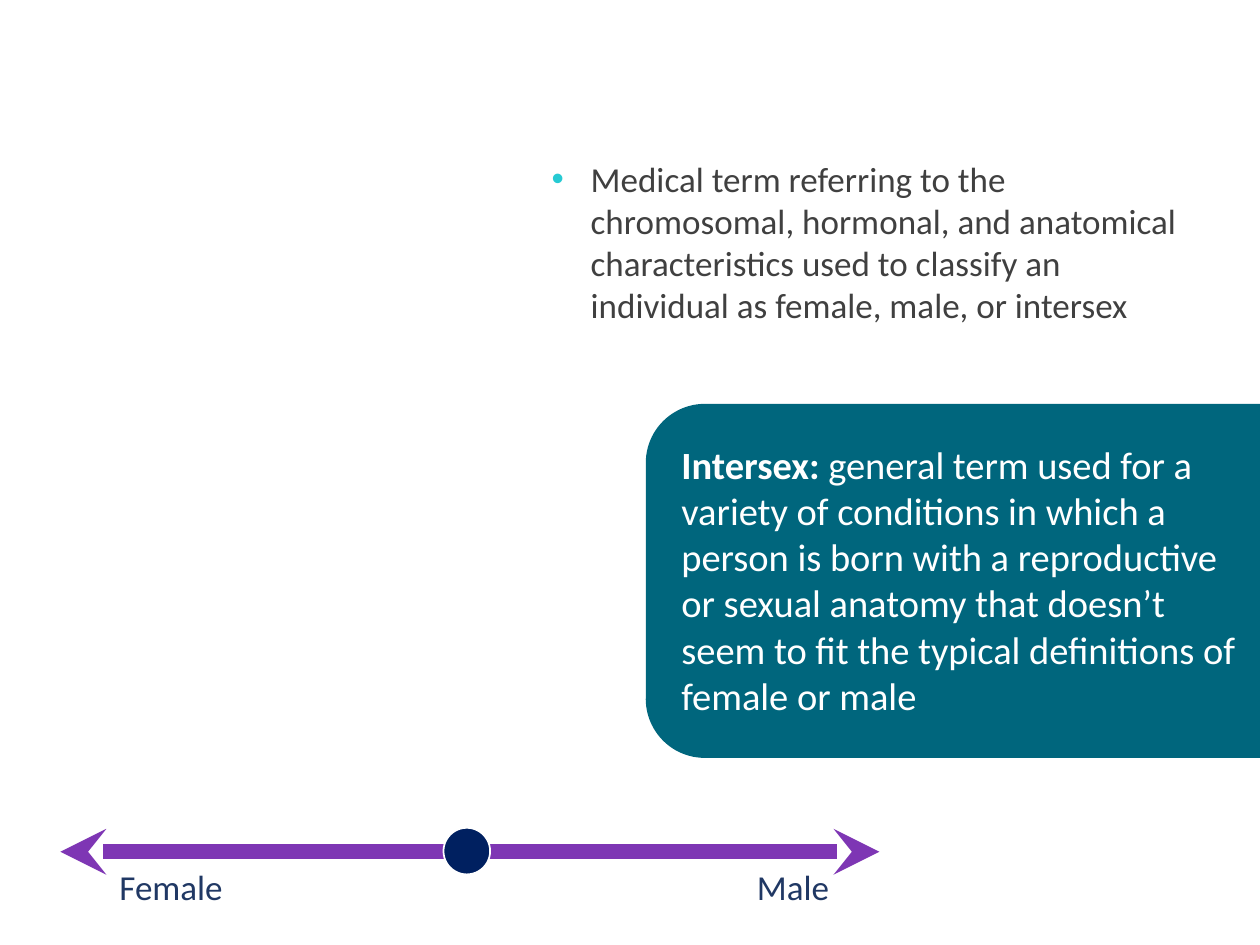
"""Build a slide defining biological sex and intersex above a female-male spectrum."""
from dataclasses import dataclass

from lxml import etree
from pptx import Presentation
from pptx import util as u
from pptx.dml.color import RGBColor
from pptx.enum import shapes, text
from pptx.oxml import ns

WIDTH, HEIGHT = u.Inches(10), u.Inches(7.5)
COLUMNS, ROWS = 100, 75


@dataclass(frozen=True)
class Theme:
    """Colours, type sizes and line widths of the slide."""
    font: str = "Calibri"
    panel: str = "00667D"
    white: str = "FFFFFF"
    body: str = "404040"
    bullet: str = "26CAD3"
    label: str = "203864"
    arrow: str = "7E36B4"
    marker: str = "002060"
    definition_size: float = 22
    body_size: float = 20
    arrow_width: float = 8.75
    outline_width: float = 1


@dataclass(frozen=True)
class Box:
    """An area in grid columns and rows."""
    column: float
    row: float
    columns: float
    rows: float

    def lengths(self) -> tuple[int, int, int, int]:
        """Return left, top, width and height."""
        return (across(self.column), down(self.row),
                across(self.columns), down(self.rows))


@dataclass(frozen=True)
class Block:
    """A text block whose runs are pairs of wording and boldness."""
    box: Box
    runs: tuple[tuple[str, bool], ...]
    size: float
    color: str
    wrap: bool = True
    alignment: text.PP_ALIGN = text.PP_ALIGN.LEFT
    bulleted: bool = False
    space_after: float = 0


THEME = Theme()
PANEL = Box(61.6, 21.7, 28.1, 48.8)
MARKER = Box(35.2, 65.7, 3.7, 3.7)
SPECTRUM_START, SPECTRUM_END, SPECTRUM_ROW = 4.8, 69.8, 67.6

DEFINITION = Block(
    Box(53.1, 34.5, 46.9, 23.2),
    (("Intersex: ", True),
     ("general term used for a variety of conditions in which a person is born "
      "with a reproductive or sexual anatomy that doesn’t seem to fit the typical "
      "definitions of female or male", False)),
    THEME.definition_size, THEME.white, space_after=15)
BODY = Block(
    Box(42.8, 12, 52.1, 14.5),
    (("Medical term referring to the chromosomal, hormonal, and anatomical "
      "characteristics used to classify an individual as female, male, or intersex",
      False),),
    THEME.body_size, THEME.body, bulleted=True)
LABELS = (
    Block(Box(8.5, 68.2, 12.6, 4.4), (("Female", False),),
          THEME.body_size, THEME.label, wrap=False),
    Block(Box(53.1, 68.2, 13.7, 4.4), (("Male", False),),
          THEME.body_size, THEME.label, wrap=False, alignment=text.PP_ALIGN.RIGHT),
)


def across(columns: float) -> int:
    """Convert grid columns to a length."""
    return round(WIDTH * columns / COLUMNS)


def down(rows: float) -> int:
    """Convert grid rows to a length."""
    return round(HEIGHT * rows / ROWS)


def add_bullet(paragraph, color: str) -> None:
    """Give a paragraph a coloured bullet with a hanging indent."""
    properties = paragraph._p.get_or_add_pPr()
    indent = u.Inches(0.31)
    properties.set("marL", str(indent))
    properties.set("indent", str(-indent))
    bullet_color = etree.SubElement(properties, ns.qn("a:buClr"))
    etree.SubElement(bullet_color, ns.qn("a:srgbClr"), val=color)
    etree.SubElement(properties, ns.qn("a:buFont"), typeface="Arial")
    etree.SubElement(properties, ns.qn("a:buChar"), char="•")


def add_block(collection, block: Block) -> None:
    """Draw a text block."""
    frame = collection.add_textbox(*block.box.lengths()).text_frame
    frame.word_wrap = block.wrap
    if block.wrap:
        frame.auto_size = text.MSO_AUTO_SIZE.SHAPE_TO_FIT_TEXT
    paragraph = frame.paragraphs[0]
    if block.bulleted:
        add_bullet(paragraph, THEME.bullet)
    paragraph.alignment = block.alignment
    paragraph.space_after = u.Pt(block.space_after)
    for wording, bold in block.runs:
        run = paragraph.add_run()
        run.text = wording
        run.font.name = THEME.font
        run.font.size = u.Pt(block.size)
        run.font.bold = bold
        run.font.color.rgb = RGBColor.from_string(block.color)


def add_filled(collection, kind: shapes.MSO_SHAPE, box: Box, color: str):
    """Draw a filled shape without line or shadow."""
    shape = collection.add_shape(kind, *box.lengths())
    shape.shadow.inherit = False
    shape.fill.solid()
    shape.fill.fore_color.rgb = RGBColor.from_string(color)
    shape.line.fill.background()
    return shape


def add_spectrum(collection) -> None:
    """Draw the two-headed spectrum arrow."""
    connector = collection.add_connector(
        shapes.MSO_CONNECTOR.STRAIGHT,
        across(SPECTRUM_START), down(SPECTRUM_ROW),
        across(SPECTRUM_END), down(SPECTRUM_ROW))
    connector.line.color.rgb = RGBColor.from_string(THEME.arrow)
    connector.line.width = u.Pt(THEME.arrow_width)
    line = connector.line._get_or_add_ln()
    for end in ("a:headEnd", "a:tailEnd"):
        etree.SubElement(line, ns.qn(end), type="stealth")
    etree.SubElement(connector._element.spPr, ns.qn("a:effectLst"))


def main() -> None:
    """Build and save the slide."""
    presentation = Presentation()
    presentation.slide_width, presentation.slide_height = WIDTH, HEIGHT
    slide = presentation.slides.add_slide(presentation.slide_layouts[6])
    callout = slide.shapes.add_group_shape().shapes
    panel = add_filled(callout, shapes.MSO_SHAPE.ROUND_2_SAME_RECTANGLE,
                       PANEL, THEME.panel)
    panel.rotation = 270
    add_block(callout, DEFINITION)
    add_block(slide.shapes, BODY)
    add_spectrum(slide.shapes)
    for label in LABELS:
        add_block(slide.shapes, label)
    marker = add_filled(slide.shapes, shapes.MSO_SHAPE.OVAL, MARKER, THEME.marker)
    marker.line.color.rgb = RGBColor.from_string(THEME.white)
    marker.line.width = u.Pt(THEME.outline_width)
    presentation.save("out.pptx")


if __name__ == "__main__":
    main()
